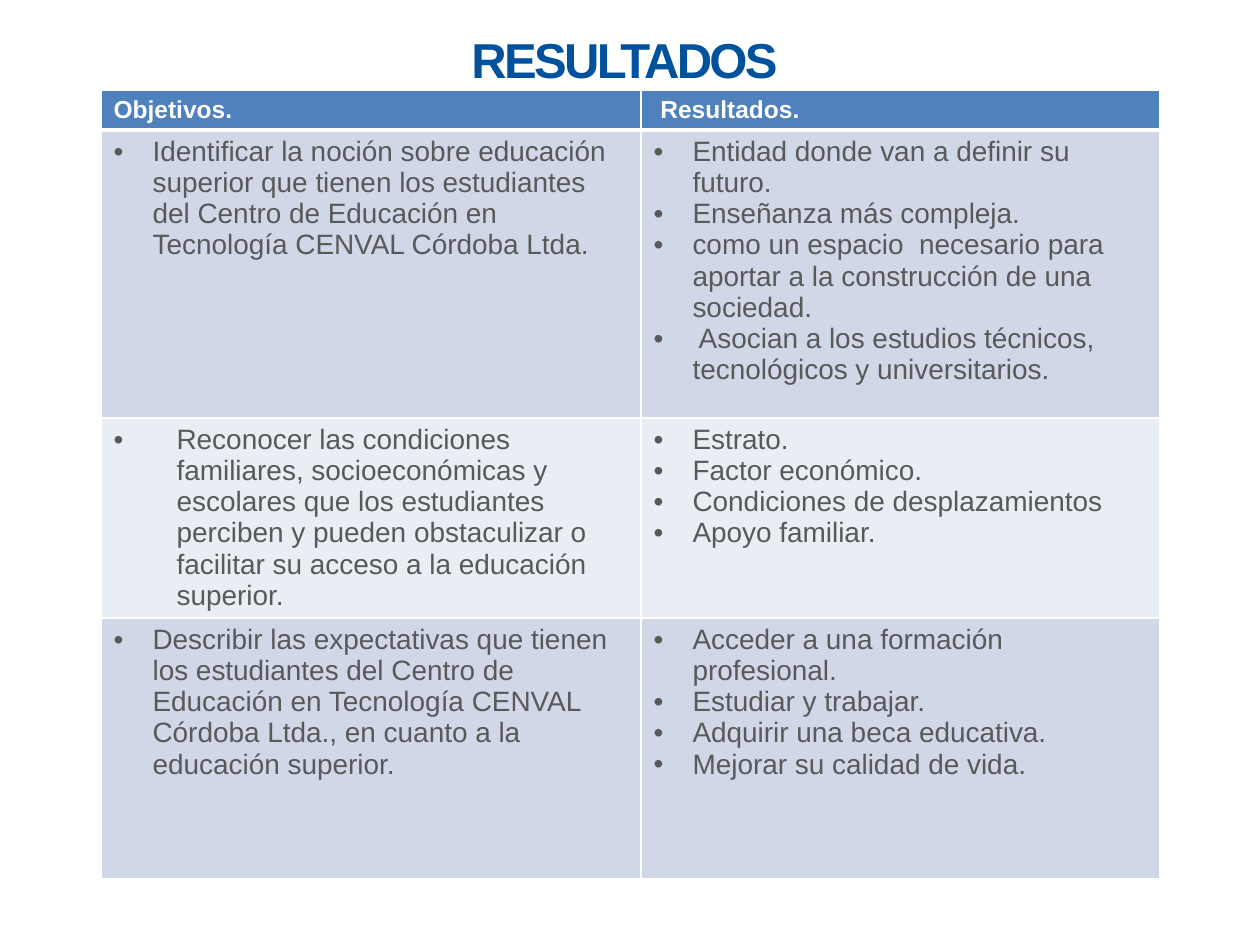
"""Builds the slide of objectives and results as a titled table."""
import dataclasses

import lxml.etree
import pptx
import pptx.dml.color
import pptx.enum.text
import pptx.oxml.ns
import pptx.util

PX = 914400 / 126


@dataclasses.dataclass(frozen=True)
class Theme:
    font: str = "Arial"
    title: str = "00529C"
    head: str = "4F81BD"
    light: str = "FFFFFF"
    text: str = "595959"
    bands: tuple = ("D0D8E8", "E9EDF4")
    title_size: int = 28
    head_size: int = 14
    body_size: int = 16


def px(n):
    return pptx.util.Emu(round(n * PX))


def tag(node, name, **attrs):
    return lxml.etree.SubElement(node, pptx.oxml.ns.qn(name), attrs)


@dataclasses.dataclass
class Page:
    slide: object
    theme: Theme

    def style(self, para, size, color, bold=False):
        for item in [para, *para.runs]:
            item.font.name = self.theme.font
            item.font.size = pptx.util.Pt(size)
            item.font.bold = bold
            item.font.color.rgb = pptx.dml.color.RGBColor.from_string(color)

    def title(self, text, left, top, width, height):
        shape = self.slide.shapes.title
        shape.left, shape.top, shape.width, shape.height = map(px, (left, top, width, height))
        frame = shape.text_frame
        frame.text = text
        frame.vertical_anchor = pptx.enum.text.MSO_ANCHOR.MIDDLE
        para = frame.paragraphs[0]
        para.alignment = pptx.enum.text.PP_ALIGN.CENTER
        self.style(para, self.theme.title_size, self.theme.title, True)
        para.runs[0]._r.get_or_add_rPr().set("spc", "-150")

    def bullet(self, para, indent):
        props = para._p.get_or_add_pPr()
        props.set("marL", str(px(indent)))
        props.set("indent", str(-px(indent)))
        tag(props, "a:buFont", typeface=self.theme.font)
        tag(props, "a:buChar", char="•")

    def border(self, cell, top, bottom):
        props = cell._tc.get_or_add_tcPr()
        for side, width in zip("LRTB", (1, 1, top, bottom)):
            line = tag(props, f"a:ln{side}", w=str(pptx.util.Pt(width)))
            tag(tag(line, "a:solidFill"), "a:srgbClr", val=self.theme.light)

    def fill(self, cell, color):
        cell.fill.solid()
        cell.fill.fore_color.rgb = pptx.dml.color.RGBColor.from_string(color)

    def head(self, cell, text):
        self.border(cell, 1, 3)
        self.fill(cell, self.theme.head)
        cell.text_frame.text = text
        self.style(cell.text_frame.paragraphs[0], self.theme.head_size, self.theme.light, True)

    def body(self, cell, items, indent, row):
        self.border(cell, 3 if row == 0 else 1, 1)
        self.fill(cell, self.theme.bands[row % 2])
        cell.text_frame.text = "\n".join(items)
        for para in cell.text_frame.paragraphs:
            self.bullet(para, indent)
            self.style(para, self.theme.body_size, self.theme.text)

    def table(self, left, top, cols, rows, heads, data):
        frame = self.slide.shapes.add_table(
            len(rows), len(cols), px(left), px(top), px(sum(cols)), px(sum(rows)))
        grid = frame.table
        for col, width in zip(grid.columns, cols):
            col.width = px(width)
        for row, height in zip(grid.rows, rows):
            row.height = px(height)
        for col, text in enumerate(heads):
            self.head(grid.cell(0, col), text)
        for row, (indent, goal, results) in enumerate(data):
            self.body(grid.cell(row + 1, 0), [goal], indent, row)
            self.body(grid.cell(row + 1, 1), results, INDENT, row)


INDENT = 39
WIDE = 63
HEADS = ("Objetivos.", " Resultados.")
DATA = (
    (INDENT,
     "Identificar la noción sobre educación superior que tienen los estudiantes "
     "del Centro de Educación en Tecnología CENVAL Córdoba Ltda.",
     ("Entidad donde van a definir su futuro.",
      "Enseñanza más compleja.",
      "como un espacio  necesario para aportar a la construcción de una sociedad.",
      " Asocian a los estudios técnicos, tecnológicos y universitarios.")),
    (WIDE,
     "Reconocer las condiciones familiares, socioeconómicas y escolares que los "
     "estudiantes perciben y pueden obstaculizar o facilitar su acceso a la "
     "educación superior.",
     ("Estrato.", "Factor económico.", "Condiciones de desplazamientos",
      "Apoyo familiar.")),
    (INDENT,
     "Describir las expectativas que tienen los estudiantes del Centro de "
     "Educación en Tecnología CENVAL Córdoba Ltda., en cuanto a la educación "
     "superior.",
     ("Acceder a una formación profesional.", "Estudiar y trabajar.",
      "Adquirir una beca educativa.", "Mejorar su calidad de vida.")),
)


def main():
    deck = pptx.Presentation()
    deck.slide_width, deck.slide_height = px(1260), px(945)
    page = Page(deck.slides.add_slide(deck.slide_layouts[5]), Theme())
    page.title("RESULTADOS ", 63, 0, 1134, 117)
    page.table(101, 90, (540, 519), (40, 288, 200, 261), HEADS, DATA)
    deck.save("out.pptx")


if __name__ == "__main__":
    main()
